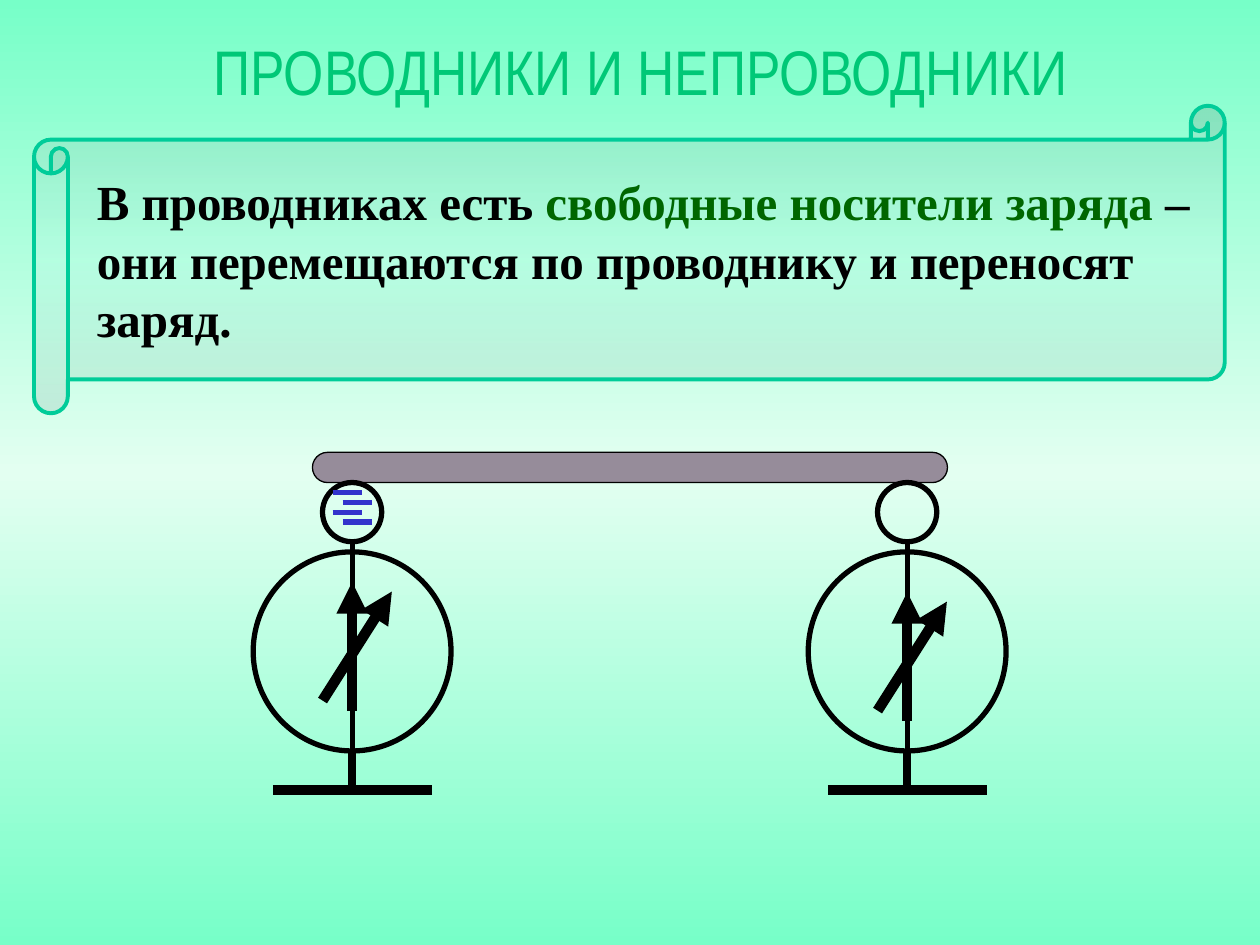
from dataclasses import dataclass
from lxml.etree import SubElement
from pptx import Presentation
from pptx.dml.color import RGBColor
from pptx.enum.shapes import MSO_CONNECTOR, MSO_SHAPE
from pptx.enum.text import MSO_ANCHOR, MSO_AUTO_SIZE, PP_ALIGN
from pptx.oxml.ns import qn
from pptx.util import Inches, Pt


@dataclass(frozen=True)
class Theme:
    ink: str = "000000"
    mint: str = "00C877"
    edge: str = "00CC99"
    leaf: str = "006600"
    rod: str = "968C9A"
    charge: str = "3333CC"
    back: tuple = ("77FFC8", "E3FFF1", "77FFC8")
    scroll: tuple = ("87B6A7", "BDFFE9", "87B6A7")
    head_font: str = "Arial Narrow"
    text_font: str = "Times New Roman"
    head_size: int = 36
    text_size: int = 28


class Board:
    cols, rows = 100, 75

    def __init__(self, deck, theme):
        self.theme = theme
        self.slide = deck.slides.add_slide(deck.slide_layouts[5])
        self.host = self.slide.shapes
        self.wide = deck.slide_width / self.cols
        self.high = deck.slide_height / self.rows
        self.blend(self.slide.background.fill, self.slide.element, theme.back)

    def spot(self, x, y):
        return round(x * self.wide), round(y * self.high)

    def blend(self, fill, node, tones, alpha=100):
        fill.gradient()
        fill.gradient_angle = 270
        stops = next(node.iter(qn("a:gsLst")))
        stops.clear()
        for step, tone in enumerate(tones):
            stop = SubElement(stops, qn("a:gs"), pos=str(step * 50000))
            color = SubElement(stop, qn("a:srgbClr"), val=tone)
            if alpha < 100:
                SubElement(color, qn("a:alpha"), val=str(alpha * 1000))

    def shape(self, kind, box, width, line=None, fill=None, bend=None):
        item = self.host.add_shape(kind, *self.spot(*box[:2]), *self.spot(*box[2:]))
        item.shadow.inherit = False
        item.line.color.rgb = RGBColor.from_string(line or self.theme.ink)
        item.line.width = Pt(width)
        if fill:
            item.fill.solid()
            item.fill.fore_color.rgb = RGBColor.from_string(fill)
        else:
            item.fill.background()
        if bend is not None:
            item.adjustments[0] = bend
        return item

    def line(self, start, end, width, color=None, arrow=False):
        item = self.host.add_connector(
            MSO_CONNECTOR.STRAIGHT, *self.spot(*start), *self.spot(*end))
        item.line.color.rgb = RGBColor.from_string(color or self.theme.ink)
        item.line.width = Pt(width)
        props = item.element.spPr
        if arrow:
            SubElement(props.find(qn("a:ln")), qn("a:tailEnd"), type="triangle")
        SubElement(props, qn("a:effectLst"))

    def run(self, para, text, font, size, color, bold=False):
        part = para.add_run()
        part.text = text
        part.font.name = font
        part.font.size = Pt(size)
        part.font.bold = bold
        part.font.color.rgb = RGBColor.from_string(color)

    def title(self, box, text):
        item = self.slide.shapes.title
        item.left, item.top = self.spot(*box[:2])
        item.width, item.height = self.spot(*box[2:])
        frame = item.text_frame
        frame.word_wrap = False
        frame.auto_size = MSO_AUTO_SIZE.NONE
        frame.vertical_anchor = MSO_ANCHOR.TOP
        para = frame.paragraphs[0]
        para.alignment = PP_ALIGN.CENTER
        look = self.theme
        self.run(para, text, look.head_font, look.head_size, look.mint)

    def text(self, box, parts):
        item = self.host.add_textbox(*self.spot(*box[:2]), *self.spot(*box[2:]))
        frame = item.text_frame
        frame.word_wrap = True
        frame.auto_size = MSO_AUTO_SIZE.SHAPE_TO_FIT_TEXT
        look = self.theme
        for words, color in parts:
            self.run(frame.paragraphs[0], words, look.text_font,
                     look.text_size, color, True)

    def scroll(self, box):
        look = self.theme
        item = self.shape(MSO_SHAPE.HORIZONTAL_SCROLL, box, 2.25, look.edge, bend=0.11)
        self.blend(item.fill, item.element, look.scroll, 26)

    def meter(self, mid):
        self.host = self.slide.shapes.add_group_shape().shapes
        self.shape(MSO_SHAPE.OVAL, (mid - 7.85, 43.8, 15.7, 15.8), 3)
        self.line((mid, 59.6), (mid, 62.7), 4.5)
        self.line((mid - 6.3, 62.7), (mid + 6.3, 62.7), 6)
        self.line((mid, 43), (mid, 59.6), 3)
        self.shape(MSO_SHAPE.OVAL, (mid - 2.35, 38.3, 4.7, 4.7), 3)
        self.host = self.slide.shapes

    def needles(self, mid, low):
        self.line((mid, low), (mid, low - 10.2), 6, arrow=True)
        self.line((mid - 2.35, low - 0.8), (mid + 3.15, low - 9.45), 6, arrow=True)

    def charges(self, left, top):
        for row in range(4):
            x, y = left + 0.8 * (row % 2), top + 0.78 * row
            self.line((x, y), (x + 2.35, y), 3, self.theme.charge)


def main():
    deck = Presentation()
    deck.slide_width, deck.slide_height = Inches(10), Inches(7.5)
    look = Theme()
    board = Board(deck, look)
    board.title((8.3, 2.1, 85.1, 4.7), "ПРОВОДНИКИ И НЕПРОВОДНИКИ")
    board.scroll((2.7, 8.4, 94.5, 24.4))
    board.shape(MSO_SHAPE.ROUNDED_RECTANGLE, (24.8, 35.9, 50.4, 2.4), 0.75,
                fill=look.rod, bend=0.5)
    board.text((6.7, 13.1, 90.6, 15), (
        ("В проводниках есть ", look.ink),
        ("свободные носители заряда", look.leaf),
        (" – они перемещаются по проводнику и переносят заряд.", look.ink)))
    meters = ((27.95, 56.4), (72, 57.2))
    for mid, low in meters:
        board.meter(mid)
    for mid, low in meters:
        board.needles(mid, low)
    board.charges(26.4, 39.1)
    deck.save("out.pptx")


if __name__ == "__main__":
    main()
